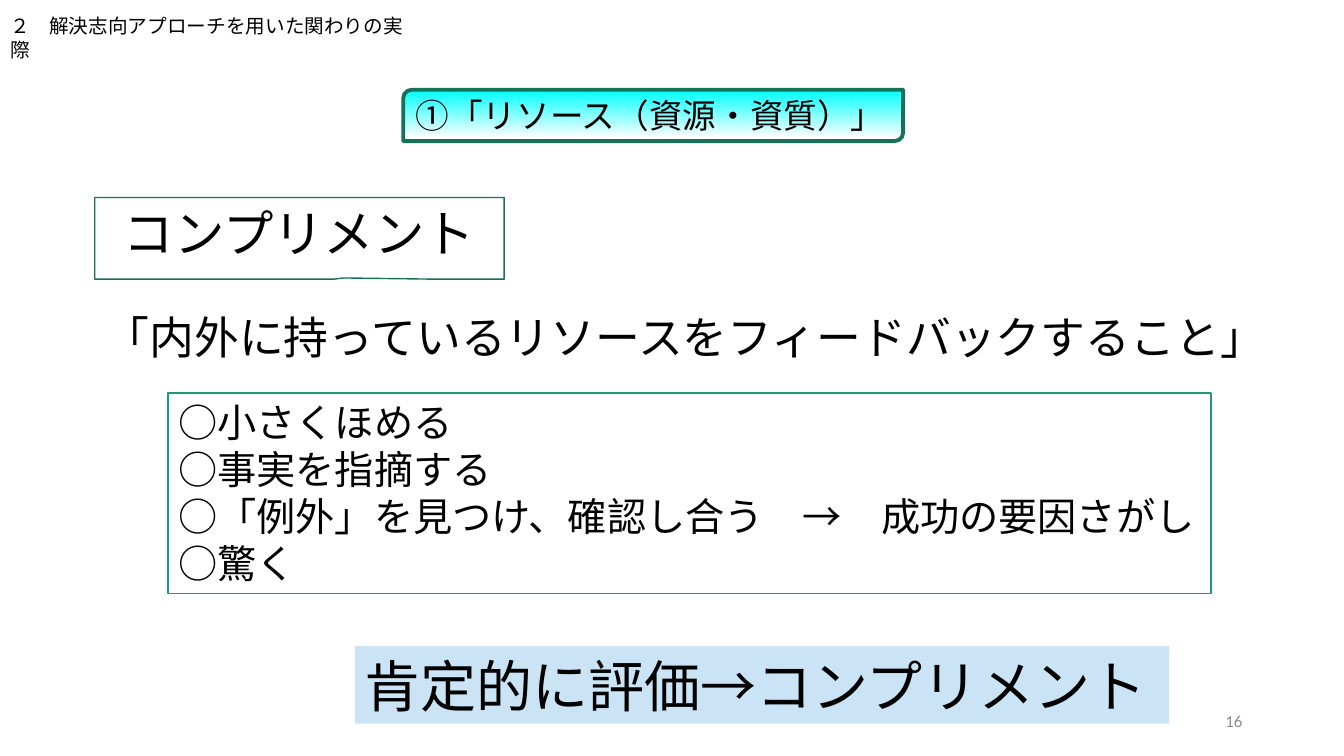
from dataclasses import dataclass

from lxml.etree import SubElement
from pptx import Presentation
from pptx.dml.color import RGBColor as RGB
from pptx.enum.shapes import MSO_SHAPE as Kind
from pptx.enum.text import MSO_ANCHOR as Anchor, PP_ALIGN as Align
from pptx.oxml.ns import qn
from pptx.util import Inches, Pt


@dataclass(frozen=True)
class Theme:
    latin: str = "Calibri"
    asian: str = "Noto Sans CJK JP"
    ink: str = "000000"
    mute: str = "8C8C8C"
    dark: str = "157259"
    green: str = "1D9A78"
    cyan: str = "00FFFF"
    white: str = "FFFFFF"
    pale: str = "CAE4F6"
    tiny: int = 12
    small: int = 14
    label: int = 24
    body: int = 28
    quote: int = 32
    head: int = 36
    big: int = 40


class Deck:
    """Hold the theme and slide; places are percentages of the slide's size."""

    def __init__(self, theme):
        self.theme = theme
        self.prs = Presentation()
        self.prs.slide_width, self.prs.slide_height = Inches(13.33), Inches(7.5)
        self.slide = self.prs.slides.add_slide(self.prs.slide_layouts[5])

    def place(self, x, y, w, h):
        wide, high = self.prs.slide_width, self.prs.slide_height
        return [int(v * size / 100) for v, size in zip((x, y, w, h), (wide, high) * 2)]

    def label(self, item, text, size, font=None, color=None, align=Align.LEFT, anchor=Anchor.TOP):
        frame = item.text_frame
        frame.text = text
        frame.word_wrap = True
        frame.vertical_anchor = anchor
        for para in frame.paragraphs:
            para.alignment = align
            for run in para.runs:
                run.font.size = Pt(size)
                run.font.name = font or self.theme.latin
                run.font.color.rgb = RGB.from_string(color or self.theme.ink)
                east = SubElement(run.font._element, qn("a:ea"))
                east.set("typeface", self.theme.asian)

    def title(self, spot, text, size):
        item = self.slide.shapes.title
        item.left, item.top, item.width, item.height = self.place(*spot)
        self.label(item, text, size)

    def text(self, spot, text, size, **style):
        self.label(self.slide.shapes.add_textbox(*self.place(*spot)), text, size, **style)

    def box(self, spot, text, size, kind=Kind.RECTANGLE, fill=None, line=None, width=1, **style):
        item = self.slide.shapes.add_shape(kind, *self.place(*spot))
        item.shadow.inherit = False
        if fill:
            item.fill.solid()
            item.fill.fore_color.rgb = RGB.from_string(fill)
        else:
            item.fill.background()
        if line:
            item.line.color.rgb = RGB.from_string(line)
            item.line.width = Pt(width)
        else:
            item.line.fill.background()
        self.label(item, text, size, **style)
        return item

    def fade(self, item, *stops):
        item.fill.gradient()
        item.fill.gradient_angle = 270
        for stop, (place, color) in zip(item.fill.gradient_stops, stops):
            stop.position = place
            stop.color.rgb = RGB.from_string(color)


def main():
    look = Theme()
    deck = Deck(look)
    deck.title((0, 1.2, 32.18, 4.53), "２　解決志向アプローチを用いた関わりの実際", look.small)
    deck.text((70.67, 92.67, 22.5, 5.33), "16", look.tiny, color=look.mute,
              align=Align.RIGHT, anchor=Anchor.MIDDLE)
    badge = deck.box((30, 11.87, 37.2, 6.8), "①「リソース（資源・資質）」", look.label,
                     kind=Kind.ROUND_2_DIAG_RECTANGLE, line=look.dark, width=2.75,
                     font=look.asian, anchor=Anchor.MIDDLE)
    deck.fade(badge, (0, look.cyan), (0.94, look.white))
    call = deck.box((7.05, 26.13, 30.46, 10.8), "コンプリメント", look.head,
                    kind=Kind.RECTANGULAR_CALLOUT, line=look.dark,
                    font=look.asian, align=Align.CENTER)
    call.adjustments[0], call.adjustments[1] = 0.108, 0.485
    deck.box((26.4, 85.47, 60.6, 10.27), "肯定的に評価→コンプリメント", look.big,
             fill=look.pale, font=look.asian)
    deck.text((7.05, 40.27, 88.45, 8.53),
              "「内外に持っているリソースをフィードバックすること」", look.quote)
    ways = ("○小さくほめる", "○事実を指摘する",
            "○「例外」を見つけ、確認し合う　→　成功の要因さがし", "○驚く")
    deck.box((12.53, 52, 77.57, 26.53), "\n".join(ways), look.body,
             line=look.green, width=1.25)
    deck.prs.save("out.pptx")


if __name__ == "__main__":
    main()
